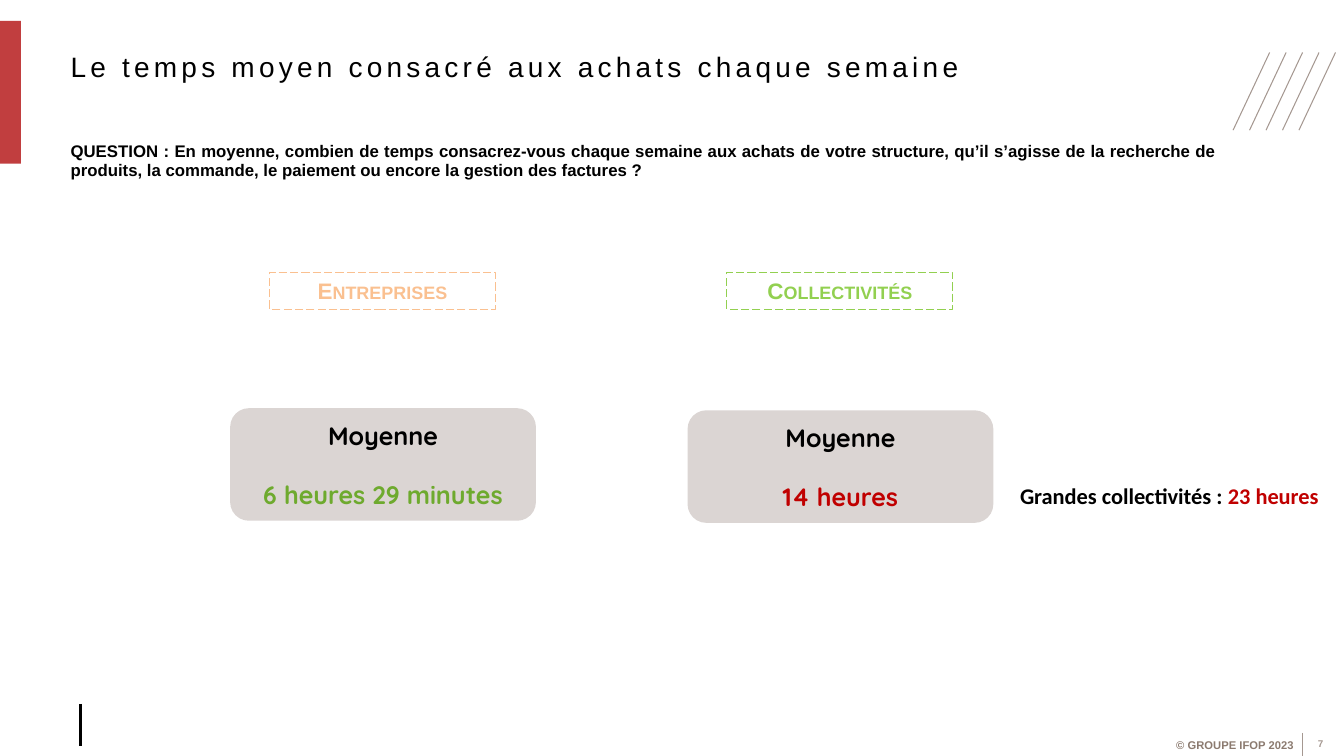
from pptx import Presentation
from pptx.dml.color import RGBColor
from pptx.enum.dml import MSO_LINE
from pptx.enum.shapes import MSO_CONNECTOR, MSO_SHAPE
from pptx.enum.text import MSO_ANCHOR, PP_ALIGN
from pptx.oxml.ns import qn
from pptx.util import Inches, Pt
from lxml.etree import SubElement

COLS, ROWS = 160, 90
BLACK, TAUPE, RED = "000000", "A59891", "C00000"


def paint(part, color):
    if hasattr(part, "solid"):
        part.solid()
        part = part.fore_color
    part.rgb = RGBColor.from_string(color)


def write(para, words, size=12, font="Arial", color=BLACK, bold=True,
          align=PP_ALIGN.LEFT, before=0, **marks):
    para.alignment = align
    if before:
        para.space_before = Pt(before)
    run = para.add_run()
    run.text = words
    run.font.size, run.font.name, run.font.bold = Pt(size), font, bold
    paint(run.font.color, color)
    for key, value in marks.items():
        run._r.get_or_add_rPr().set(key, value)


class Page:
    def __init__(self):
        self.deck = Presentation()
        self.deck.slide_width = Inches(13.33)
        self.deck.slide_height = Inches(7.5)
        self.slide = self.deck.slides.add_slide(self.deck.slide_layouts[5])
        self.shapes = self.slide.shapes

    def grid(self, *nums):
        sides = (self.deck.slide_width / COLS, self.deck.slide_height / ROWS)
        return [round(num * sides[i % 2]) for i, num in enumerate(nums)]

    def title(self, area, words, **fmt):
        head = self.shapes.title
        head.left, head.top, head.width, head.height = self.grid(*area)
        head.text_frame.vertical_anchor = MSO_ANCHOR.MIDDLE
        write(head.text_frame.paragraphs[0], words, **fmt)

    def label(self, area, runs, wrap=True, **fmt):
        frame = self.shapes.add_textbox(*self.grid(*area)).text_frame
        frame.word_wrap = wrap
        for words, color in runs:
            write(frame.paragraphs[0], words, color=color, **fmt)

    def box(self, area, kind=MSO_SHAPE.RECTANGLE, fill=None, edge=None, alpha=None):
        box = self.shapes.add_shape(kind, *self.grid(*area))
        box.shadow.inherit = False
        if fill:
            paint(box.fill, fill)
        else:
            box.fill.background()
        if alpha:
            tint = box._element.spPr.find(qn("a:solidFill"))[0]
            SubElement(tint, qn("a:alpha")).set("val", str(alpha * 1000))
        if edge:
            paint(box.line.color, edge)
            box.line.width = Pt(0.75)
            box.line.dash_style = MSO_LINE.LONG_DASH
        else:
            box.line.fill.background()
        return box.text_frame

    def tag(self, area, words, color):
        frame = self.box(area, edge=color)
        write(frame.paragraphs[0], words, size=16, color=color,
              align=PP_ALIGN.CENTER, cap="small")

    def card(self, area, words, color):
        frame = self.box(area, MSO_SHAPE.ROUNDED_RECTANGLE, "DBD5D3")
        style = dict(size=18, font="Quicksand", align=PP_ALIGN.CENTER)
        write(frame.paragraphs[0], "Moyenne", **style)
        write(frame.add_paragraph(), words, color=color, before=20.5, **style)

    def rule(self, ends, color=TAUPE, width=0.75):
        rule = self.shapes.add_connector(MSO_CONNECTOR.STRAIGHT, *self.grid(*ends))
        paint(rule.line.color, color)
        rule.line.width = Pt(width)
        SubElement(rule._element.spPr, qn("a:effectLst"))

    def table(self, area, rows, words, **fmt):
        table = self.shapes.add_table(len(rows), 1, *self.grid(*area)).table
        table.first_row = table.horz_banding = False
        for i, tall in enumerate(rows):
            table.rows[i].height = self.grid(0, tall)[1]
            cell = table.cell(i, 0)
            cell.fill.background()
            cell.vertical_anchor = MSO_ANCHOR.MIDDLE
        write(table.cell(0, 0).text_frame.paragraphs[0], words, **fmt)


def main():
    page = Page()
    page.box((0, 2.5, 2.5, 17), fill="B20E10", alpha=80)
    page.rule((9.6, 83.8, 9.6, 88.8), BLACK, 2.25)
    for i in range(5):
        step = 1.96 * i
        page.rule((151.15 + step, 6.25, 146.8 + step, 15.5))
    page.rule((155.1, 87.25, 155.1, ROWS))
    page.label((134.4, 87.25, 20.8, 2.9), [("© GROUPE IFOP 2023", "8B7A6F")],
               size=8, align=PP_ALIGN.RIGHT)
    page.label((154.4, 87.25, 5.6, 2.75), [("7", TAUPE)],
               size=7, align=PP_ALIGN.CENTER)

    page.title((7.2, 2.5, 138.9, 10.9),
               "Le temps moyen consacré aux achats chaque semaine",
               size=20, bold=False, spc="300")
    page.table((7.2, 16.2, 138.9, 6.6), (3.7, 2.9),
               "QUESTION : En moyenne, combien de temps consacrez-vous chaque "
               "semaine aux achats de votre structure, qu’il s’agisse de la "
               "recherche de produits, la commande, le paiement ou encore la "
               "gestion des factures ?", align=PP_ALIGN.JUSTIFY)

    groups = [("Entreprises", "FAC090", "6 heures 29 minutes", "6EAA2E", 48.6),
              ("Collectivités", "92D050", "14 heures", RED, 48.85)]
    for i, (name, hue, time, tone, top) in enumerate(groups):
        left = 27.4 + 54.45 * i
        page.tag((left + 4.7, 32.4, 26.9, 4.4), name, hue)
        page.card((left, top, 36.4, 13.4), time, tone)
    page.label((120.25, 56.8, 38.2, 4.4),
               [("Grandes collectivités : ", BLACK), ("23 heures", RED)],
               wrap=False, size=16, font="Calibri")
    page.deck.save("out.pptx")


if __name__ == "__main__":
    main()
